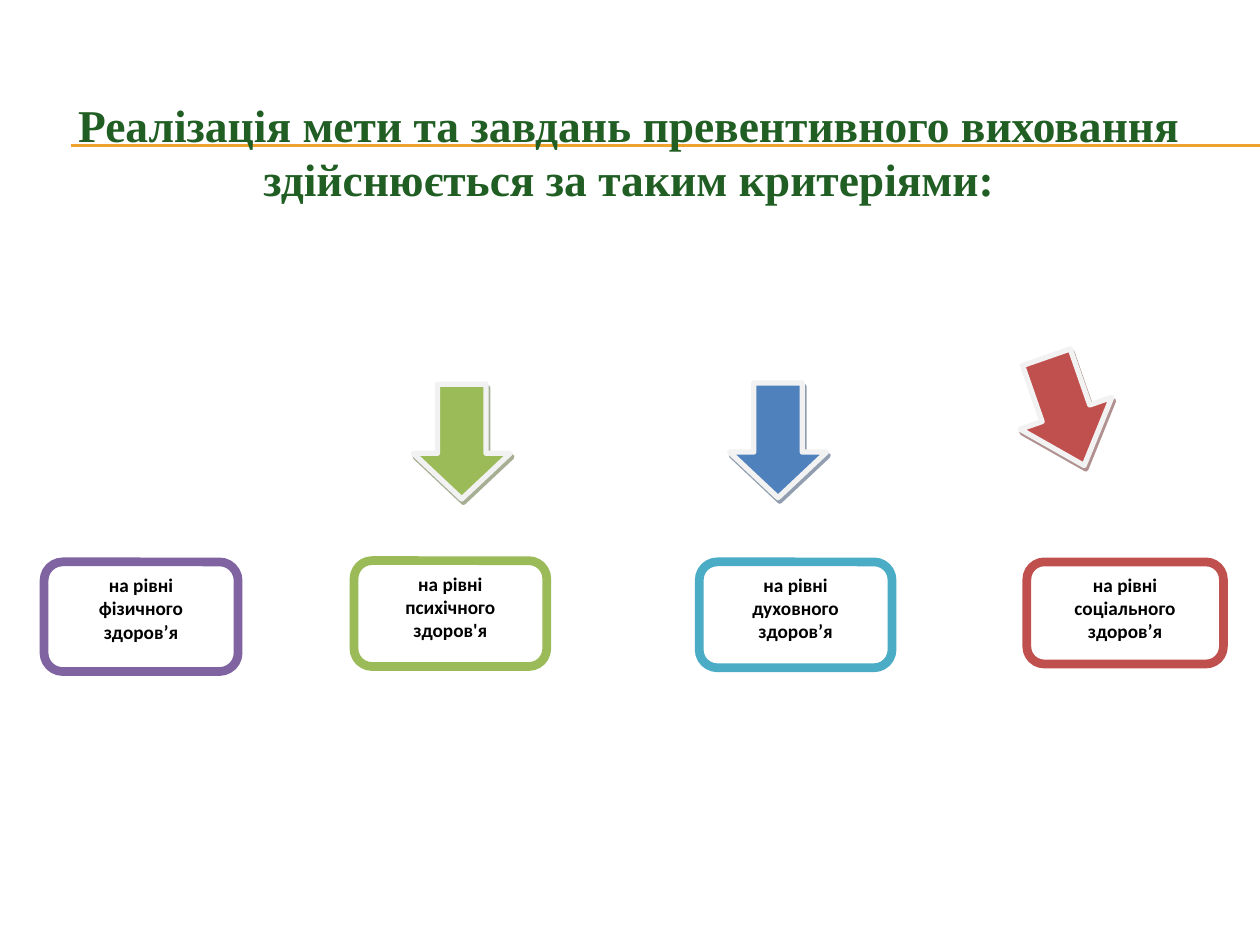
from lxml import etree
from pptx import Presentation
from pptx.dml.color import RGBColor
from pptx.enum.shapes import MSO_CONNECTOR, MSO_SHAPE
from pptx.enum.text import MSO_ANCHOR, PP_ALIGN
from pptx.oxml.ns import qn
from pptx.util import Inches, Pt

LINE = MSO_CONNECTOR.STRAIGHT
ARROW = MSO_SHAPE.DOWN_ARROW
ROUND = MSO_SHAPE.ROUNDED_RECTANGLE
CENTER = PP_ALIGN.CENTER
MIDDLE, TOP = MSO_ANCHOR.MIDDLE, MSO_ANCHOR.TOP

COLORS = {
    "gold": "F0A22E", "title": "205E23", "white": "FFFFFF", "black": "000000",
    "edge": "F2F2F2", "purple": "8064A2", "green": "9BBB59", "blue": "4F81BD",
    "teal": "4BACC6", "red": "C0504D", "moss": "4E6128", "navy": "243F60",
    "wine": "622423",
}
TITLE = ["Реалізація мети та завдань превентивного виховання",
         "здійснюється за таким критеріями:"]
# box, colour, last two lines of the label
LEVELS = [
    ((0.35, 4.46, 1.54, 0.87), "purple", "фізичного", "здоров’я"),
    ((2.81, 4.45, 1.53, 0.84), "green", "психічного", "здоров'я"),
    ((5.55, 4.46, 1.53, 0.84), "teal", "духовного", "здоров’я"),
    ((8.15, 4.46, 1.56, 0.81), "red", "соціального", "здоров’я"),
]
# left, top, fill, shadow, turn, adjustments
ARROWS = [
    (3.28, 3.05, "green", "moss", 0, (0.5, 0.47)),
    (5.79, 3.04, "blue", "navy", 0, (0.5, 0.47)),
    (8.07, 2.81, "red", "wine", 340.8, (0.52, 0.57)),
]


def color(name):
    return RGBColor.from_string(COLORS[name])


def add_run(para, text, font, size, hue):
    run = para.add_run()
    run.text = text
    run.font.name, run.font.size, run.font.bold = font, Pt(size), True
    run.font.color.rgb = color(hue)


def add_shape(slide, kind, box, fill, line, width):
    shape = slide.shapes.add_shape(kind, *map(Inches, box))
    shape.shadow.inherit = False
    shape.fill.solid()
    shape.fill.fore_color.rgb = color(fill)
    shape.line.color.rgb = color(line)
    shape.line.width = Pt(width)
    return shape


def add_rule(slide, left, top, width):
    """Draw the double gold line behind the title."""
    for y in (top, top + 0.01):
        rule = slide.shapes.add_connector(
            LINE, Inches(left), Inches(y), Inches(left + width), Inches(y))
        rule.line.color.rgb = color("gold")
        rule.line.width = Pt(0.75)
        etree.SubElement(rule._element.spPr, qn("a:effectLst"))


def add_title(slide, box):
    frame = slide.shapes.add_textbox(*map(Inches, box)).text_frame
    frame.word_wrap = True
    frame.vertical_anchor = MIDDLE
    first, last = frame.paragraphs[0], frame.add_paragraph()
    for para, text in zip((first, last), TITLE):
        para.alignment = CENTER
        add_run(para, text, "Times New Roman", 26, "title")
    # The first line sits a little left of the centre
    first._p.get_or_add_pPr().set("marR", str(Inches(0.17)))


def add_level(slide, box, hue, *words):
    shape = add_shape(slide, ROUND, box, "white", hue, 5)
    shape.adjustments[0] = 0.17
    frame = shape.text_frame
    frame.word_wrap = True
    frame.vertical_anchor = TOP
    para = frame.paragraphs[0]
    para.alignment = CENTER
    para.space_after = Pt(10)
    add_run(para, "на рівні", "Calibri", 11, "black")
    for word in words:
        para.add_line_break()
        add_run(para, word, "Calibri", 11, "black")


def add_arrow(slide, left, top, fill, shade, turn, adjust):
    shape = add_shape(slide, ARROW, (left, top, 0.77, 0.91), fill, "edge", 3)
    shape.rotation = turn
    for i, value in enumerate(adjust):
        shape.adjustments[i] = value
    effects = shape._element.spPr.find(qn("a:effectLst"))
    shadow = etree.SubElement(
        effects, qn("a:outerShdw"), blurRad="0", dist=str(Pt(2.2)),
        dir=str(63 * 60000), algn="ctr", rotWithShape="0")
    tint = etree.SubElement(shadow, qn("a:srgbClr"), val=COLORS[shade])
    etree.SubElement(tint, qn("a:alpha"), val="50000")


def main():
    prs = Presentation()
    prs.slide_width, prs.slide_height = Inches(10), Inches(7.5)
    slide = prs.slides.add_slide(prs.slide_layouts[6])
    add_rule(slide, 0.56, 1.15, 9.44)
    add_title(slide, (0.33, 0.74, 9.5, 0.92))
    for level in LEVELS:
        add_level(slide, *level)
    for arrow in ARROWS:
        add_arrow(slide, *arrow)
    prs.save("out.pptx")


if __name__ == "__main__":
    main()
